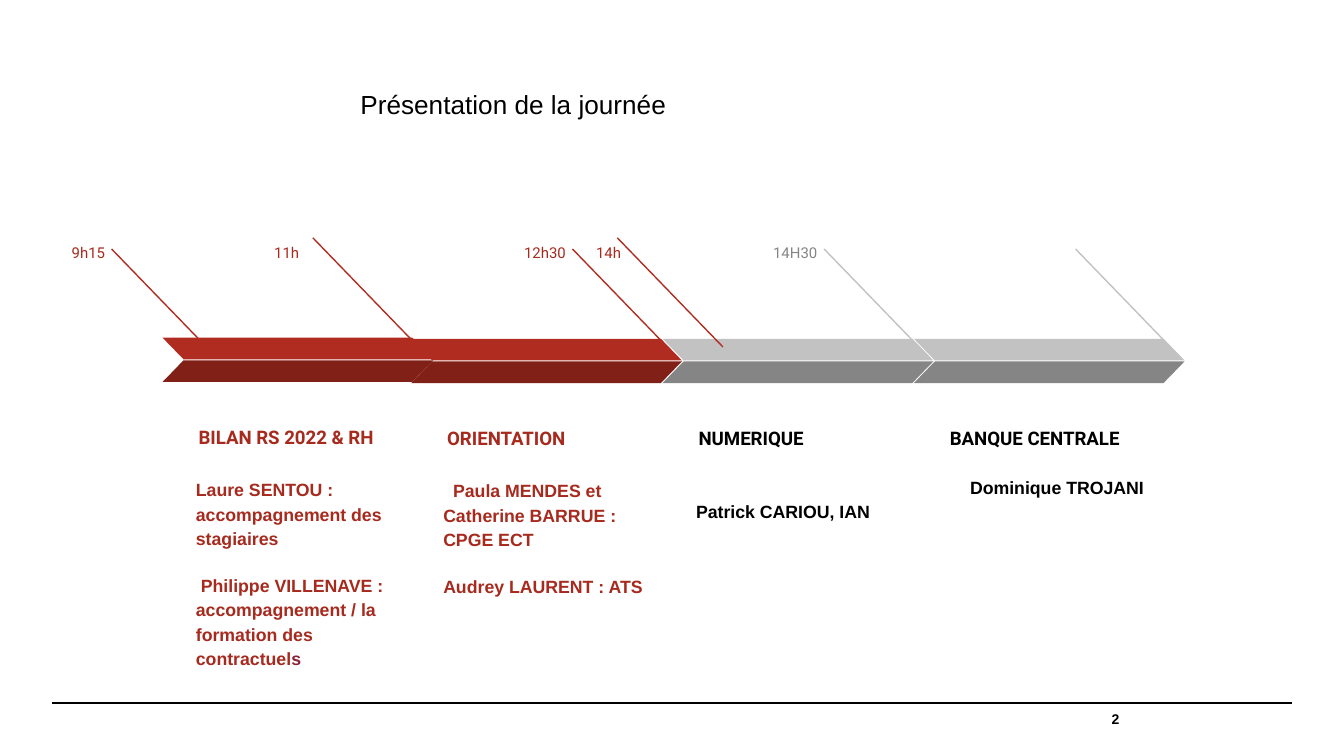
from lxml import etree
from pptx import Presentation
from pptx.dml.color import RGBColor
from pptx.enum import shapes, text
from pptx.oxml.ns import qn
from pptx.util import Pt

BLACK = RGBColor(0, 0, 0)
RED = RGBColor(0xB0, 0x2C, 0x20)
DARK = RGBColor(0x80, 0x20, 0x17)
RUST = RGBColor(0xA7, 0x2A, 0x1E)
WINE = RGBColor(0x8C, 0x22, 0x37)
SILVER = RGBColor(0xC2, 0xC2, 0xC2)
GREY = RGBColor(0x85, 0x85, 0x85)

WARM = (RED, DARK, RUST)
COOL = (SILVER, GREY, BLACK)

# A paragraph is (first-line indent, [(words, own colour or None), ...])
# Stage: bar left, bar top, colours, heading, body shift (x, y), paragraphs
STAGES = [
    (87.1, 180.9, WARM, "BILAN RS 2022 & RH", (10.8, 66.8), [
        (0, [("Laure SENTOU : accompagnement des stagiaires", None)]),
        (2.64, [("Philippe VILLENAVE : accompagnement / la formation des contractuel",
                 None), ("s", WINE)])]),
    (220.3, 181.5, WARM, "ORIENTATION", (10.1, 66.8), [
        (5.28, [("Paula MENDES et Catherine BARRUE : CPGE ECT", None)]),
        (0, [("Audrey LAURENT : ATS", None)])]),
    (355, 181.5, COOL, "NUMERIQUE", (10.8, 78.5), [
        (0, [("Patrick CARIOU, IAN", None)])]),
    (489.6, 181.5, COOL, "BANQUE CENTRALE", (23, 65.5), [
        (0, [("Dominique TROJANI", None)])]),
]
# Tick: hour, right edge of label, label colour, line start x, y, line colour
TICKS = [
    ("9h15", 63.4, RUST, 59.8, 133.4, RED),
    ("11h", 167.4, RUST, 167.6, 127.4, RED),
    ("12h30", 310.3, RUST, 306.7, 133.4, RED),
    ("14h", 339.8, RUST, 330.7, 127.4, RED),
    ("14H30", 445, GREY, 441.5, 133.4, SILVER),
    (None, None, None, 576.2, 133.4, SILVER),
]
BAR_W, BAR_H, BAR_STEP = 145, 11.6, 12.1
TICK_W, TICK_H = 56.6, 58.5

deck = Presentation()
deck.slide_width, deck.slide_height = Pt(720), Pt(405)
slide = deck.slides.add_slide(deck.slide_layouts[6])


def write(paras, x, y, w, h, size, color, font="Arial", bold=False,
          align=text.PP_ALIGN.LEFT, anchor=text.MSO_ANCHOR.TOP,
          inset=7.2, lead=1.15, gap=0):
    """Add a text box; paras is a string or a list of paragraphs."""
    if isinstance(paras, str):
        paras = [(0, [(paras, None)])]
    box = slide.shapes.add_textbox(Pt(x), Pt(y), Pt(w), Pt(h))
    frame = box.text_frame
    frame.word_wrap = True
    frame.vertical_anchor = anchor
    frame.margin_left = frame.margin_right = Pt(inset)
    frame.margin_top = frame.margin_bottom = Pt(inset)
    for i, (indent, runs) in enumerate(paras):
        para = frame.add_paragraph() if i else frame.paragraphs[0]
        para.alignment, para.line_spacing = align, lead
        if i:
            para.space_before = Pt(gap)
        if indent:
            para._p.get_or_add_pPr().set("indent", str(int(Pt(indent))))
        for words, own in runs:
            run = para.add_run()
            run.text = words
            run.font.name, run.font.size = font, Pt(size)
            run.font.bold = bold
            run.font.color.rgb = own or color


def rule(x, y, w, h, color, width=0.75):
    line = slide.shapes.add_connector(
        shapes.MSO_CONNECTOR.STRAIGHT, Pt(x), Pt(y), Pt(x + w), Pt(y + h))
    line.line.color.rgb, line.line.width = color, Pt(width)
    etree.SubElement(line._element.spPr, qn("a:effectLst"))


def bar(x, y, color, flip):
    half = slide.shapes.add_shape(
        shapes.MSO_SHAPE.PARALLELOGRAM, Pt(x), Pt(y), Pt(BAR_W), Pt(BAR_H))
    half.shadow.inherit = False
    half.adjustments[0] = 0.97
    half.fill.solid()
    half.fill.fore_color.rgb = color
    half.line.fill.background()
    if flip:
        half._element.spPr.xfrm.set("flipH", "1")


rule(28.1, 376.7, 663.8, 0, BLACK, 0.8)
write("2", 493, 371, 106.7, 28, 7.5, BLACK, bold=True, inset=0, lead=1,
      align=text.PP_ALIGN.RIGHT, anchor=text.MSO_ANCHOR.MIDDLE)
write("Présentation de la journée", 186, 40.3, 370, 48, 14, BLACK, lead=1)

for x, y, (light, dark, ink), head, (dx, dy), paras in STAGES:
    bar(x, y, light, True)
    bar(x, y + BAR_STEP, dark, False)
    write(head, x + 12.2, y + 30.9, 119, 35.3, 10, ink, font="Roboto",
          bold=True, anchor=text.MSO_ANCHOR.BOTTOM)
    write(paras, x + dx, y + dy, 122, 58.3, 9.5, ink, bold=True, gap=12)

for hour, right, ink, x, y, color in TICKS:
    rule(x, y, TICK_W, TICK_H, color)
    if hour:
        write(hour, right - 49, 123.8, 49, 18.7, 8, ink, font="Roboto",
              align=text.PP_ALIGN.RIGHT)

deck.save("out.pptx")
